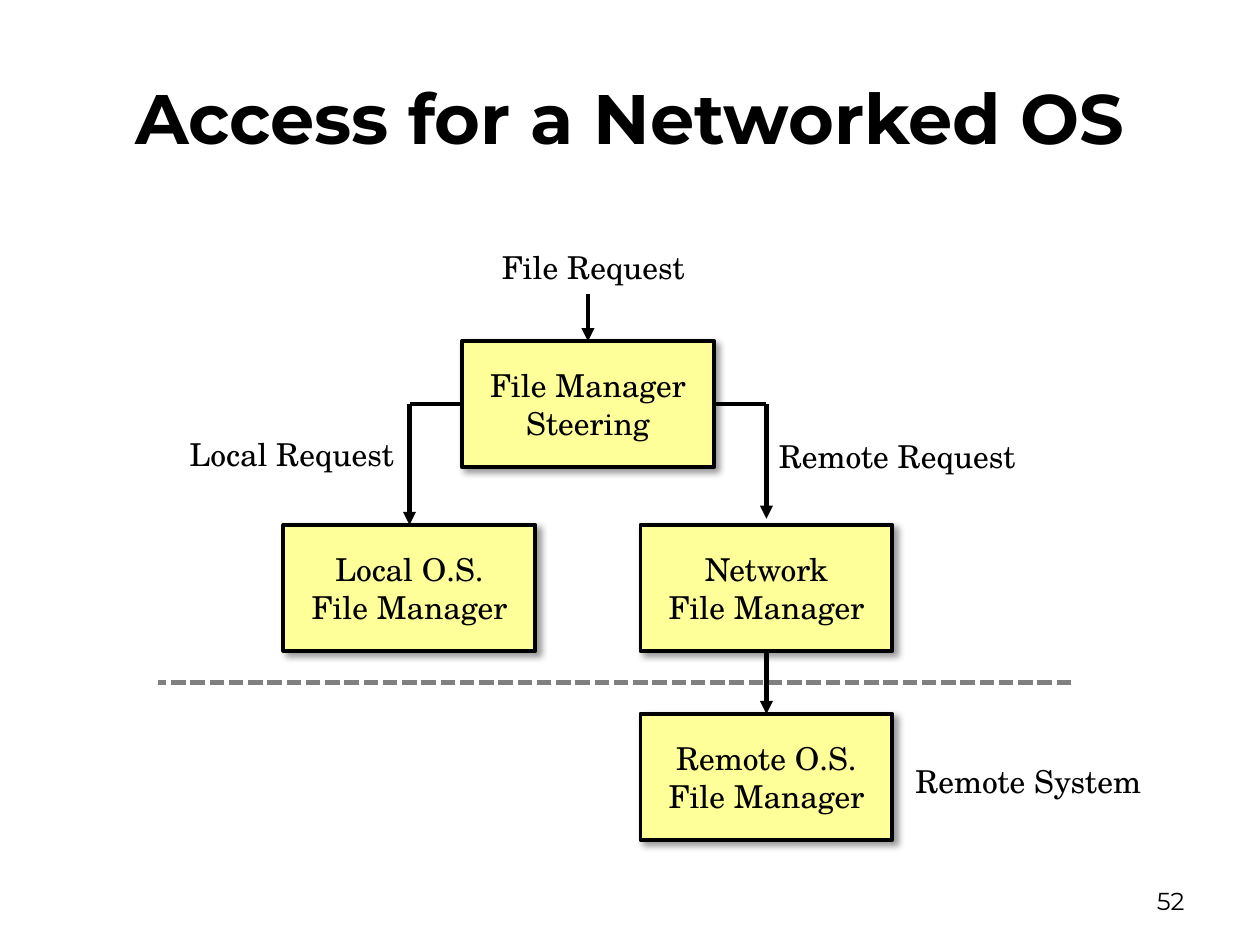
from collections import namedtuple

from lxml import etree
from pptx import Presentation
from pptx import util as u
from pptx.dml.color import RGBColor
from pptx.enum import dml, shapes, text
from pptx.oxml import parse_xml
from pptx.oxml.ns import nsdecls, qn

BLACK = RGBColor(0, 0, 0)
GRAY = RGBColor(0x80, 0x80, 0x80)
WHITE = RGBColor(0xFF, 0xFF, 0xFF)
YELLOW = RGBColor(0xFF, 0xFF, 0x99)
HEADING_FONT, DIAGRAM_FONT = "Montserrat", "TeX Gyre Schola"
LEFT, CENTER, RIGHT = (text.PP_ALIGN.LEFT, text.PP_ALIGN.CENTER,
                       text.PP_ALIGN.RIGHT)
TOP, MIDDLE = text.MSO_ANCHOR.TOP, text.MSO_ANCHOR.MIDDLE

# Grid of 120 columns by 90 rows, 12 to the inch
Area = namedtuple("Area", "left top width height")
LABEL_ROWS = 4.8
BOX_COLUMNS, BOX_ROWS = 24, 12


def grid(*cells):
    return [u.Inches(cell / 12) for cell in cells]


def write(shape, words, size, font, align=CENTER, anchor=MIDDLE, bold=False):
    frame = shape.text_frame
    frame.word_wrap = True
    frame.vertical_anchor = anchor
    para = frame.paragraphs[0]
    para.alignment = align
    for number, line in enumerate(words.split("\n")):
        if number:
            para.add_line_break()
        span = para.add_run()
        span.text = line
        span.font.size = u.Pt(size)
        span.font.name = font
        span.font.bold = bold
        span.font.color.rgb = BLACK


def add_label(page, area, words, align, anchor=TOP, size=18, font=DIAGRAM_FONT):
    box = page.shapes.add_textbox(*grid(*area))
    write(box, words, size, font, align, anchor)


def add_manager(page, area, words):
    box = page.shapes.add_shape(shapes.MSO_SHAPE.RECTANGLE, *grid(*area))
    box.shadow.inherit = False
    box.fill.solid()
    box.fill.fore_color.rgb = YELLOW
    box.line.color.rgb = BLACK
    box.line.width = u.Pt(2.25)
    # Soft shadow towards the lower right
    effects = box._element.spPr.find(qn("a:effectLst"))
    effects.append(parse_xml(
        f'<a:outerShdw {nsdecls("a")} blurRad="{u.Pt(4)}" dist="{u.Pt(3)}" '
        'dir="2700000" algn="tl" rotWithShape="0"><a:srgbClr val="000000">'
        '<a:alpha val="40000"/></a:srgbClr></a:outerShdw>'))
    write(box, words, 18, DIAGRAM_FONT)


def add_line(page, start, end, width=2.5, color=BLACK, arrow=True):
    line = page.shapes.add_connector(shapes.MSO_CONNECTOR.STRAIGHT,
                                     *grid(*start, *end))
    line.line.color.rgb = color
    line.line.width = u.Pt(width)
    if arrow:
        etree.SubElement(line.line._get_or_add_ln(), qn("a:tailEnd"),
                         type="triangle")
    etree.SubElement(line._element.spPr, qn("a:effectLst"))
    return line


def add_heading(page, area):
    title = page.shapes.title
    title.left, title.top, title.width, title.height = grid(*area)
    write(title, "Access for a Networked OS", 40, HEADING_FONT, bold=True)


def add_diagram(page, area):
    left, top = area.left, area.top

    def manager_area(column, row):
        return Area(left + column, top + row, BOX_COLUMNS, BOX_ROWS)

    steering = manager_area(29, 9.5)
    local = manager_area(12, 27)
    network = manager_area(46, 27)
    remote = manager_area(46, 45)

    # Border between the local and the remote system
    border = top + 42
    divider = add_line(page, (left + area.width, border), (left, border),
                       2.75, GRAY, arrow=False)
    divider.line.dash_style = dml.MSO_LINE.SQUARE_DOT

    # File managers
    for place, words in ((steering, "File Manager\nSteering"),
                         (local, "Local O.S.\nFile Manager"),
                         (network, "Network\nFile Manager"),
                         (remote, "Remote O.S.\nFile Manager")):
        add_manager(page, place, words)

    # Request paths
    half = BOX_COLUMNS / 2
    entry = steering.left + half
    bend = steering.top + BOX_ROWS / 2
    add_line(page, (entry, top + 5), (entry, steering.top))
    for edge, target, gap in ((steering.left, local, 0),
                              (steering.left + BOX_COLUMNS, network, 0.6)):
        middle = target.left + half
        add_line(page, (middle, bend), (middle, target.top - gap))
        add_line(page, (edge, bend), (middle, bend), 2.25, arrow=False)
    middle = network.left + half
    add_line(page, (middle, network.top + BOX_ROWS), (middle, remote.top))

    # Labels
    for column, row, columns, words, align, anchor in (
            (31, 0, 21, "File Request", CENTER, MIDDLE),
            (1.7, 17.8, 22, "Local Request", RIGHT, TOP),
            (58, 18, 29, "Remote Request", LEFT, TOP),
            (71, 49, 29, "Remote System", LEFT, TOP)):
        add_label(page, Area(left + column, top + row, columns, LABEL_ROWS),
                  words, align, anchor)


def main():
    deck = Presentation()
    deck.slide_width, deck.slide_height = grid(120, 90)
    page = deck.slides.add_slide(deck.slide_layouts.get_by_name("Title Only"))
    page.background.fill.solid()
    page.background.fill.fore_color.rgb = WHITE

    add_heading(page, Area(6, 3.6, 108, 15))
    add_diagram(page, Area(15, 23, 87, 57))
    # Page number
    add_label(page, Area(86, 83.4, 28, LABEL_ROWS), "52", RIGHT, MIDDLE,
              14, HEADING_FONT)
    deck.save("out.pptx")


if __name__ == "__main__":
    main()
